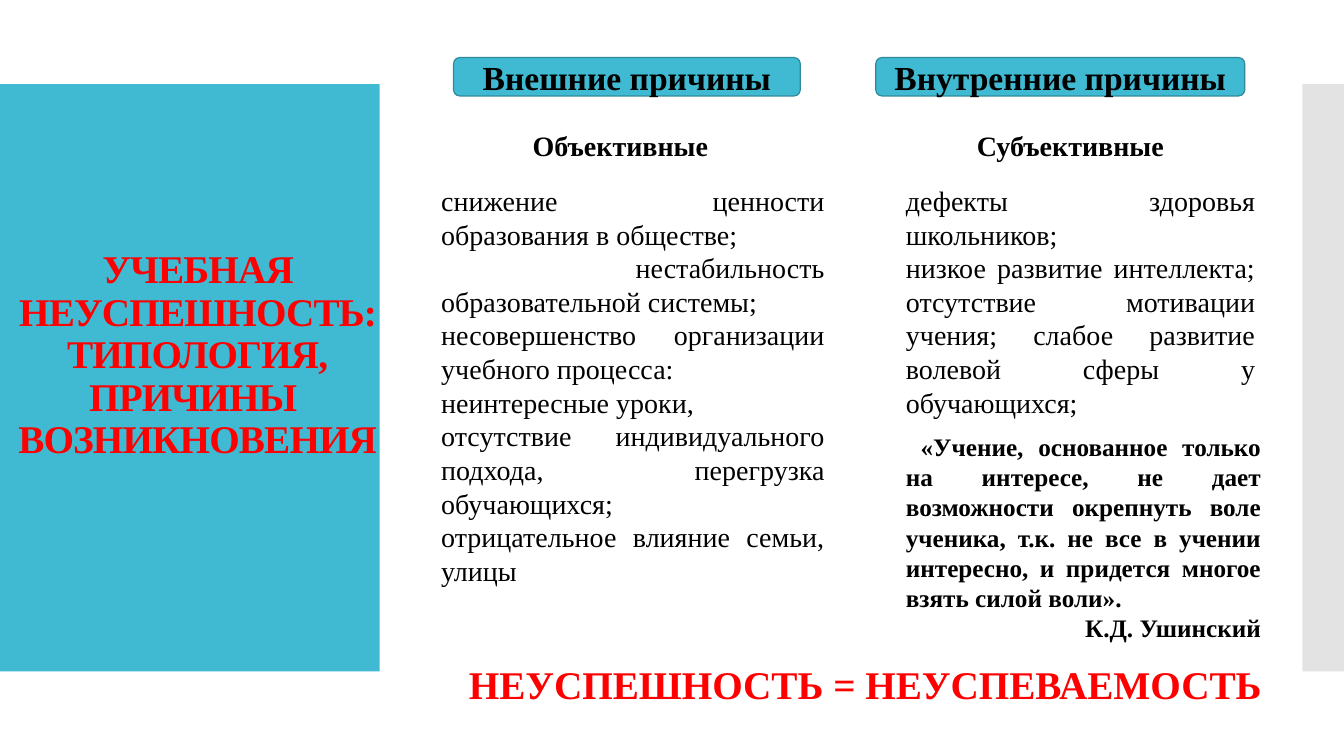
from lxml.etree import SubElement
from pptx import Presentation
from pptx.dml.color import RGBColor
from pptx.enum.shapes import MSO_SHAPE as Shape
from pptx.enum.text import MSO_ANCHOR as Anchor, MSO_AUTO_SIZE as AutoSize, PP_ALIGN as Align
from pptx.oxml.ns import qn
from pptx.util import Cm, Pt


def paint(color, hex_value):
    color.rgb = RGBColor.from_string(hex_value)


class SlideBuilder:
    FONT = "Times New Roman"
    TEAL, TEAL_EDGE, GREY = "40BAD2", "2F8A9B", "C8C8C8"
    RED, BLACK = "FF0000", "000000"

    def __init__(self, page):
        self.page = page

    def style(self, para, size, color, bold, align):
        para.alignment = align
        font = para.font
        font.name, font.size, font.bold = self.FONT, Pt(size), bold
        paint(font.color, color)

    def fill_text(self, frame, lines, size, color=BLACK, bold=False, align=Align.CENTER):
        frame.word_wrap = True
        for index, line in enumerate(lines):
            para = frame.add_paragraph() if index else frame.paragraphs[0]
            para.text = line
            self.style(para, size, color, bold, align)

    def panel(self, place, fill, opacity=100, kind=Shape.RECTANGLE):
        box = self.page.shapes.add_shape(kind, *map(Cm, place))
        box.shadow.inherit = False
        box.fill.solid()
        paint(box.fill.fore_color, fill)
        box.line.fill.background()
        if opacity < 100:
            color = box.element.spPr.find(qn("a:solidFill"))[0]
            SubElement(color, qn("a:alpha"), val=str(opacity * 1000))
        return box

    def badge(self, place, label):
        box = self.panel(place, self.TEAL, kind=Shape.ROUNDED_RECTANGLE)
        box.line.fill.solid()
        paint(box.line.color, self.TEAL_EDGE)
        box.line.width = Pt(0.85)
        box.text_frame.vertical_anchor = Anchor.MIDDLE
        self.fill_text(box.text_frame, [label], 24, bold=True)

    def text(self, place, lines, size, **look):
        box = self.page.shapes.add_textbox(*map(Cm, place))
        self.fill_text(box.text_frame, lines, size, **look)
        return box.text_frame

    def title(self, place, wording):
        box = self.page.shapes.title
        box.left, box.top, box.width, box.height = map(Cm, place)
        box.element.getparent().append(box.element)  # bring above the panel
        frame = box.text_frame
        frame.auto_size = AutoSize.NONE
        frame.vertical_anchor = Anchor.MIDDLE
        self.fill_text(frame, [wording], 28, color=self.RED, bold=True)
        para = frame.paragraphs[0]
        para.line_spacing = 0.9
        for span in para.runs:
            span.font._element.set("spc", "-60")


def main():
    deck = Presentation()
    deck.slide_width, deck.slide_height = Cm(33.87), Cm(19.05)
    slide = SlideBuilder(deck.slides.add_slide(deck.slide_layouts[5]))

    # Side panels and title
    slide.panel((0, 2.12, 9.57, 14.8), slide.TEAL)
    slide.panel((32.82, 2.12, 1.05, 14.8), slide.GREY, opacity=50)
    slide.title((0, 3.12, 9.96, 11.7),
                "УЧЕБНАЯ НЕУСПЕШНОСТЬ: ТИПОЛОГИЯ,\vПРИЧИНЫ \vВОЗНИКНОВЕНИЯ")

    # Two columns of causes
    left, right = 10.87, 22.58
    slide.badge((11.43, 1.45, 8.74, 0.97), "Внешние причины")
    slide.badge((22.07, 1.45, 9.3, 0.97), "Внутренние причины")
    slide.text((left, 3.12, 9.53, 1.11), ["Объективные"], 20, bold=True)
    slide.text((right, 3.12, 8.79, 1.11), ["Субъективные"], 20, bold=True)
    slide.text((left, 4.5, 10.16, 11.38), [
        "снижение ценности образования в обществе;",
        " нестабильность образовательной системы;",
        "несовершенство организации учебного процесса:",
        "неинтересные уроки, ",
        "отсутствие индивидуального подхода, перегрузка обучающихся; ",
        "отрицательное влияние семьи, улицы",
    ], 20, align=Align.JUSTIFY)
    slide.text((right, 4.5, 9.3, 6.25), [
        "дефекты здоровья школьников;",
        "низкое развитие интеллекта; отсутствие мотивации учения; "
        "слабое развитие волевой сферы у обучающихся;",
    ], 20, align=Align.JUSTIFY)

    # Quotation with its author
    quote = slide.text((right, 10.74, 9.45, 5.64), [
        " «Учение, основанное только на интересе, не дает возможности окрепнуть "
        "воле ученика, т.к. не все в учении интересно, и придется многое взять "
        "силой воли». ",
        "К.Д. Ушинский",
    ], 18, bold=True, align=Align.JUSTIFY)
    quote.paragraphs[1].alignment = Align.RIGHT

    # Conclusion
    slide.text((left, 16.51, 21.87, 1.45), ["НЕУСПЕШНОСТЬ = НЕУСПЕВАЕМОСТЬ"],
               28, color=slide.RED, bold=True)

    deck.save("out.pptx")


if __name__ == "__main__":
    main()
